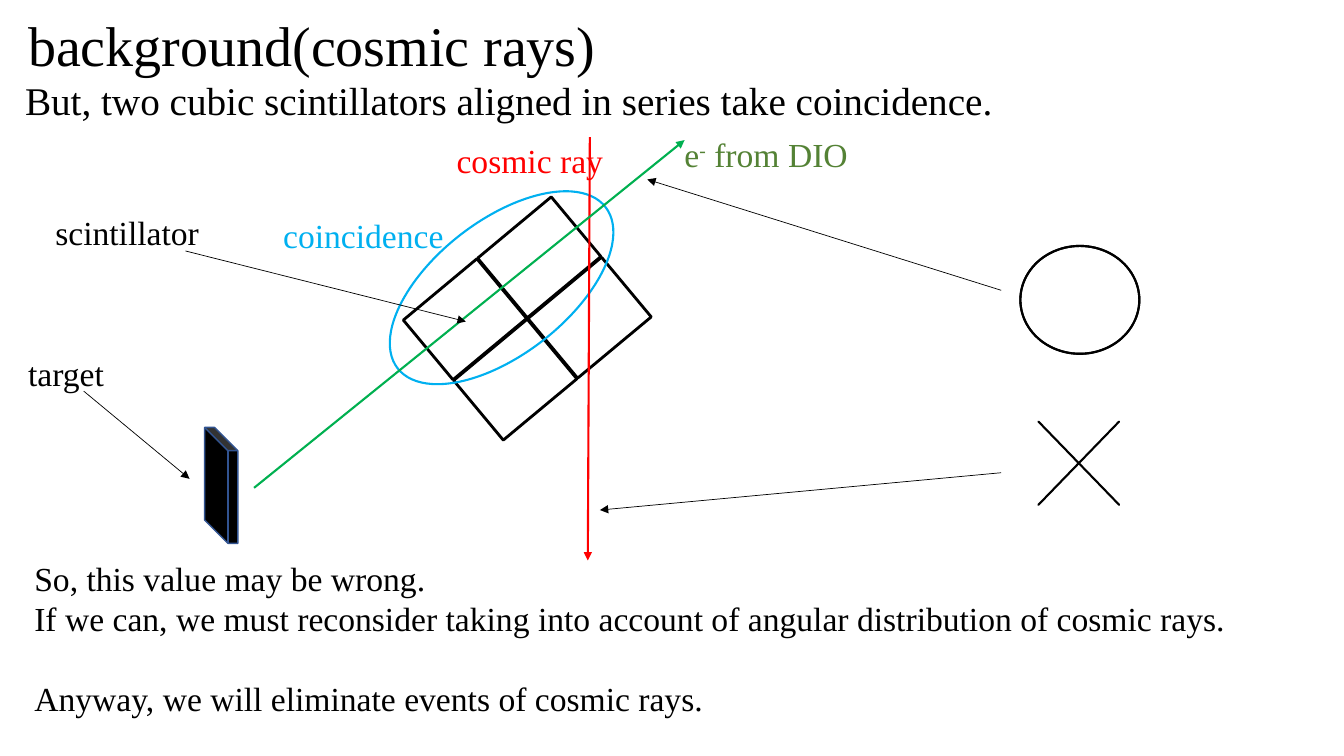
from dataclasses import dataclass
from itertools import product
from math import cos, radians, sin

from lxml.etree import SubElement
from pptx import Presentation
from pptx.dml.color import RGBColor
from pptx.enum.shapes import MSO_CONNECTOR as Connector
from pptx.enum.shapes import MSO_SHAPE as Preset
from pptx.enum.text import MSO_ANCHOR as Anchor
from pptx.enum.text import MSO_AUTO_SIZE as AutoSize
from pptx.enum.text import PP_ALIGN as Align
from pptx.oxml.ns import qn
from pptx.util import Inches, Pt

BLACK = RGBColor(0x00, 0x00, 0x00)
RED = RGBColor(0xFF, 0x00, 0x00)
BLUE = RGBColor(0x00, 0xB0, 0xF0)
GREEN = RGBColor(0x00, 0xB0, 0x50)
OLIVE = RGBColor(0x54, 0x82, 0x35)
NAVY = RGBColor(0x32, 0x54, 0x91)
YELLOW = RGBColor(0xFF, 0xFF, 0x00)

FONT = "Times New Roman"
LEADING = 1.2
COLUMNS, ROWS = 133.3, 75
WIDTH, HEIGHT = Inches(13.33), Inches(7.5)
TILT = -39.8


@dataclass(frozen=True)
class Box:
    """A rectangle in grid columns and rows."""
    left: float
    top: float
    width: float
    height: float

    def lengths(self):
        """Return the rectangle in slide units."""
        return (across(self.left), down(self.top), across(self.width), down(self.height))


@dataclass(frozen=True)
class Label:
    """A one-line text, whose second piece is raised when there is one."""
    pieces: tuple[str, ...]
    box: Box
    color: RGBColor = BLACK
    size: float = 24


@dataclass(frozen=True)
class Arrow:
    """A straight arrow between two grid points."""
    start: tuple[float, float]
    end: tuple[float, float]
    color: RGBColor = BLACK
    weight: float = 0.5


@dataclass(frozen=True)
class Figure:
    """A preset shape with its look."""
    preset: Preset
    box: Box
    line: RGBColor = BLACK
    weight: float = 1.5
    fill: RGBColor | None = None
    rotation: float = 0
    adjustment: float | None = None
    flipped: bool = False


TITLE = Label(("background(cosmic rays)",), Box(1.8, 0.5, 71.9, 7.7), size=40)
CONCLUSION_BOX = Box(2.4, 54.8, 129.1, 17.2)
CONCLUSIONS = (
    "So, this value may be wrong.",
    "If we can, we must reconsider taking into account of angular distribution of cosmic rays.",
    "Anyway, we will eliminate events of cosmic rays.",
)
LABELS = (
    Label(("But, two cubic scintillators aligned in series take coincidence.",),
          Box(1.5, 7.1, 104.4, 5.7), size=28),
    Label(("cosmic ray",), Box(44.3, 13.4, 33.8, 5), RED),
    Label(("coincidence",), Box(27.1, 20.8, 19.5, 5), BLUE),
    Label(("scintillator",), Box(4.5, 20.5, 19.2, 5)),
    Label(("target",), Box(1.8, 34.5, 19.8, 5)),
    Label(("e", "-", " from DIO"), Box(66.9, 12.8, 31.8, 5), OLIVE),
)
ARROWS = (
    Arrow((58.5, 13.6), (58.3, 55.6), RED, 1.5),
    Arrow((25.2, 48.4), (67.9, 13.9), GREEN, 1.5),
    Arrow((18.4, 24.9), (46.2, 31.9)),
    Arrow((8.3, 38.8), (18.8, 47.5)),
    Arrow((99.3, 46.9), (59.5, 50.6)),
    Arrow((99.3, 28.8), (64.2, 17.8)),
)
FIGURES = (
    Figure(Preset.OVAL, Box(43.1, 15.5, 13.3, 26.1), BLUE, rotation=52.2),
    Figure(Preset.CUBE, Box(20.3, 42.4, 3.3, 11.5), NAVY, 1, BLACK,
           adjustment=0.7, flipped=True),
    Figure(Preset.DONUT, Box(101.2, 24.4, 11.8, 10.7), fill=BLACK, adjustment=0),
    Figure(Preset.MATH_MULTIPLY, Box(99.3, 38, 15.4, 15.9), fill=YELLOW, adjustment=0),
)


def across(columns: float) -> int:
    """Convert grid columns to a length."""
    return round(WIDTH * columns / COLUMNS)


def down(rows: float) -> int:
    """Convert grid rows to a length."""
    return round(HEIGHT * rows / ROWS)


def scintillators() -> list[Figure]:
    """Return the tilted two by two block of scintillators."""
    center_x, center_y, width, height = 52.3, 31.6, 9.5, 7.7
    pitch_x, pitch_y = 9.6, 7.8
    cosine, sine = cos(radians(TILT)), sin(radians(TILT))
    figures = []
    for row, column in product((-0.5, 0.5), repeat=2):
        along, aside = column * pitch_x, row * pitch_y
        left = center_x + along * cosine - aside * sine - width / 2
        top = center_y + along * sine + aside * cosine - height / 2
        figures.append(Figure(Preset.RECTANGLE, Box(left, top, width, height),
                              weight=2, rotation=TILT))
    return figures


def format_paragraph(paragraph, size: float, color: RGBColor) -> None:
    """Give a paragraph its font and spacing."""
    paragraph.alignment = Align.LEFT
    paragraph.line_spacing = Pt(size * LEADING)
    paragraph.space_before = Pt(0)
    paragraph.font.name = FONT
    paragraph.font.size = Pt(size)
    paragraph.font.color.rgb = color


def prepare_frame(shape, box: Box):
    """Place a text shape and return its wrapped text frame."""
    shape.left, shape.top, shape.width, shape.height = box.lengths()
    frame = shape.text_frame
    frame.word_wrap = True
    frame.auto_size = AutoSize.NONE
    frame.vertical_anchor = Anchor.TOP
    return frame


def write_label(shape, label: Label) -> None:
    """Write a label into a text shape."""
    paragraph = prepare_frame(shape, label.box).paragraphs[0]
    for index, piece in enumerate(label.pieces):
        run = paragraph.add_run()
        run.text = piece
        if index == 1:
            run._r.get_or_add_rPr().set("baseline", "30000")
    format_paragraph(paragraph, label.size, label.color)


def write_conclusions(shape) -> None:
    """Write the conclusions, the last one set apart by a line."""
    frame = prepare_frame(shape, CONCLUSION_BOX)
    frame.text = "\n".join(CONCLUSIONS)
    for paragraph in frame.paragraphs:
        properties = paragraph._p.get_or_add_pPr()
        properties.set("marL", "0")
        properties.set("indent", "0")
        SubElement(properties, qn("a:buNone"))
        format_paragraph(paragraph, 24, BLACK)
    frame.paragraphs[-1].space_before = Pt(24 * LEADING)


def draw_arrow(slide, arrow: Arrow) -> None:
    """Draw an arrow with a triangular head at its end."""
    (start_x, start_y), (end_x, end_y) = arrow.start, arrow.end
    connector = slide.shapes.add_connector(
        Connector.STRAIGHT, across(start_x), down(start_y), across(end_x), down(end_y))
    connector.line.color.rgb = arrow.color
    connector.line.width = Pt(arrow.weight)
    SubElement(connector.line._get_or_add_ln(), qn("a:tailEnd"), type="triangle")
    SubElement(connector._element.spPr, qn("a:effectLst"))


def draw_figure(slide, figure: Figure) -> None:
    """Draw a preset shape."""
    shape = slide.shapes.add_shape(figure.preset, *figure.box.lengths())
    shape.shadow.inherit = False
    shape.rotation = figure.rotation
    shape.line.color.rgb = figure.line
    shape.line.width = Pt(figure.weight)
    if figure.fill is None:
        shape.fill.background()
    else:
        shape.fill.solid()
        shape.fill.fore_color.rgb = figure.fill
    if figure.adjustment is not None:
        shape.adjustments[0] = figure.adjustment
    if figure.flipped:
        shape._element.spPr.find(qn("a:xfrm")).set("flipH", "1")


def main() -> None:
    """Build and save the slide."""
    presentation = Presentation()
    presentation.slide_width, presentation.slide_height = WIDTH, HEIGHT
    slide = presentation.slides.add_slide(presentation.slide_layouts[1])
    write_label(slide.shapes.title, TITLE)
    write_conclusions(slide.placeholders[1])
    for figure in (*scintillators(), *FIGURES):
        draw_figure(slide, figure)
    for arrow in ARROWS:
        draw_arrow(slide, arrow)
    for label in LABELS:
        write_label(slide.shapes.add_textbox(*label.box.lengths()), label)
    presentation.save("out.pptx")


if __name__ == "__main__":
    main()
